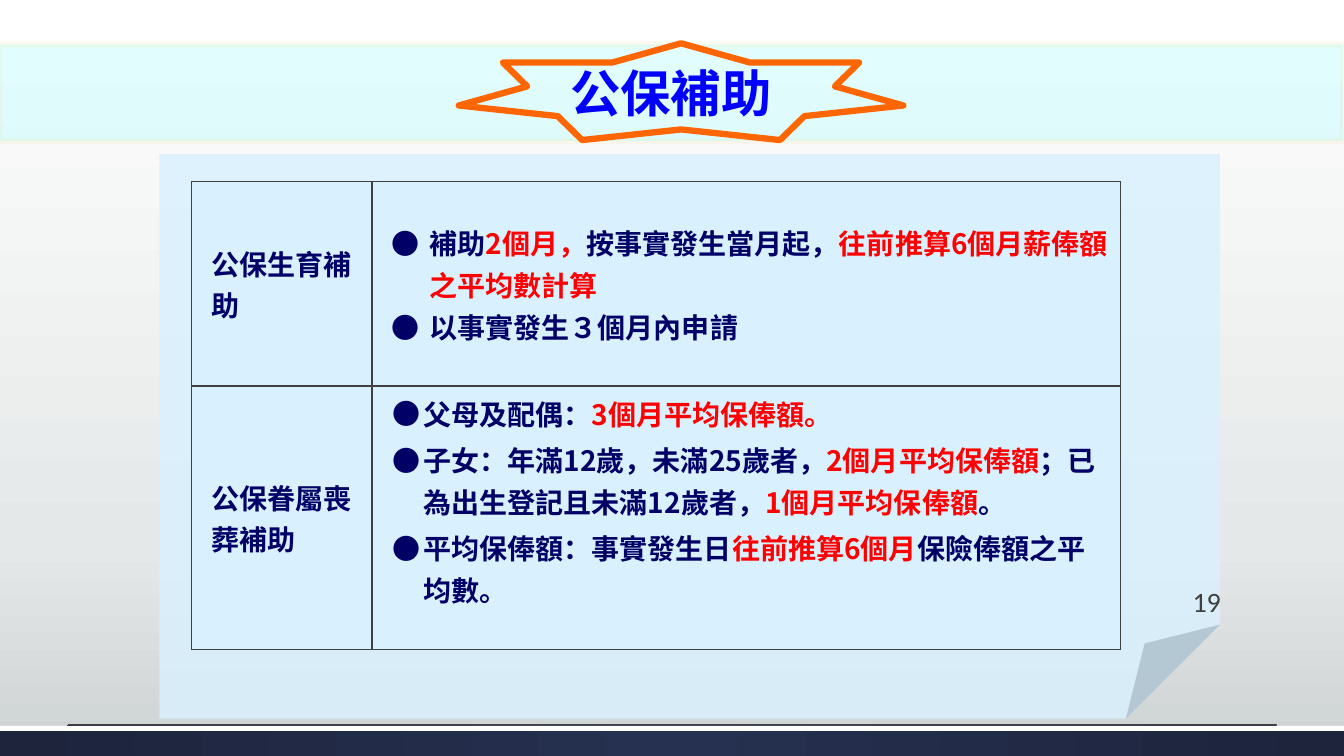
import pptx
import pptx.util
import pptx.dml.color
import pptx.enum.shapes
import pptx.enum.text
import pptx.oxml
import pptx.oxml.ns

Inches, Pt = pptx.util.Inches, pptx.util.Pt
SHAPE = pptx.enum.shapes.MSO_SHAPE
ALIGN = pptx.enum.text.PP_ALIGN
ANCHOR = pptx.enum.text.MSO_ANCHOR
qn = pptx.oxml.ns.qn

HAN = "Noto Sans CJK SC"
NAVY, RED, SKY, GRAY, ORANGE = "000066", "FF0000", "D9F1FF", "404040", "FF6600"
TITLE, PAGE = "公保補助", "19"
COLS, ROWS = (1.79, 7.42), (2.03, 2.61)
FLAT, WIDE, TIGHT = (0.1, 0), (0.47, -0.38), (0.41, -0.31)

CELLS = [
    [
        (FLAT, ANCHOR.MIDDLE, [[("公保生育補", NAVY)], [("助", NAVY)]]),
        (WIDE, ANCHOR.MIDDLE, [
            [("補助", NAVY), ("2個月，", RED), ("按事實發生當月起，", NAVY),
             ("往前推算6個月薪俸額之平均數計算", RED)],
            [("以事實發生３個月內申請", NAVY)],
        ]),
    ],
    [
        (FLAT, ANCHOR.MIDDLE, [[("公保眷屬喪葬補助", NAVY)]]),
        (TIGHT, ANCHOR.TOP, [
            [("父母及配偶：", NAVY), ("3個月平均保俸額。", RED)],
            [("子女：年滿12歲，未滿25歲者，", NAVY), ("2個月平均保俸額", RED),
             ("；已為出生登記且未滿12歲者，", NAVY), ("1個月平均保俸額", RED),
             ("。", NAVY)],
            [("平均保俸額：事實發生日", NAVY), ("往前推算6個月", RED),
             ("保險俸額之平均數。", NAVY)],
        ]),
    ],
]


def put(item, **vals):
    for key, val in vals.items():
        setattr(item, key, val)


def rgb(code):
    return pptx.dml.color.RGBColor.from_string(code)


def node(tag, inner="", attrs=""):
    return pptx.oxml.parse_xml(
        f'<a:{tag} {pptx.oxml.ns.nsdecls("a")} {attrs}>{inner}</a:{tag}>')


def paint(fill, code, alpha=None):
    fill.solid()
    fill.fore_color.rgb = rgb(code)
    if alpha:
        color = fill._xPr.find(qn("a:solidFill"))[0]
        color.append(node("alpha", attrs=f'val="{alpha * 1000}"'))


def blend(fill, stops, way):
    fill.gradient()
    old = fill._xPr.find(qn("a:gradFill"))
    list_xml = "".join(
        f'<a:gs pos="{pos * 1000}"><a:srgbClr val="{code}"/></a:gs>' for pos, code in stops)
    old.getparent().replace(old, node("gradFill", f"<a:gsLst>{list_xml}</a:gsLst>{way}"))


def draw(kind, box):
    shape = slide.shapes.add_shape(kind, *map(Inches, box))
    shape.shadow.inherit = False
    shape.line.fill.background()
    return shape


def write(para, text, size, code, font=HAN, bold=True):
    run = para.add_run()
    run.text = text
    put(run.font, size=Pt(size), bold=bold, name=font)
    run.font.color.rgb = rgb(code)
    run._r.get_or_add_rPr().append(node("ea", attrs=f'typeface="{font}"'))
    return run


def frame(cell):
    props = cell._tc.get_or_add_tcPr()
    line = f'<a:solidFill><a:srgbClr val="{GRAY}"/></a:solidFill>'
    for spot, side in enumerate("LRTB"):
        props.insert(spot, node("ln" + side, line, 'w="12700"'))


def fill_cell(cell, indent, anchor, paras):
    paint(cell.fill, SKY)
    frame(cell)
    cell.vertical_anchor = anchor
    left, hang = indent
    for num, runs in enumerate(paras):
        para = cell.text_frame.add_paragraph() if num else cell.text_frame.paragraphs[0]
        if num == 0 or indent == TIGHT:
            para.space_before = Pt(3.1)
        props = para._p.get_or_add_pPr()
        props.set("marL", str(Inches(left)))
        props.set("indent", str(Inches(hang)))
        if hang:
            para.line_spacing = Pt(30)
            props.append(node("buFont", attrs=f'typeface="{HAN}"'))
            props.append(node("buChar", attrs='char="●"'))
        for text, code in runs:
            write(para, text, 20, code)


deck = pptx.Presentation()
put(deck, slide_width=Inches(13.33), slide_height=Inches(7.5))
slide = deck.slides.add_slide(deck.slide_layouts[5])
blend(slide.background.fill, [(0, "FFFFFF"), (72, "E5E8E8"), (100, "CDD2D2")],
      '<a:lin ang="5400000" scaled="0"/>')

band = slide.shapes.title
put(band, left=Inches(-0.01), top=Inches(0.44), width=Inches(13.33), height=Inches(0.96))
paint(band.fill, "66FFFF", 18)
band.line.width = Pt(4.33)
paint(band.line.fill, "FFC000", 5)
put(band.text_frame, vertical_anchor=ANCHOR.MIDDLE, word_wrap=True,
    auto_size=pptx.enum.text.MSO_AUTO_SIZE.NONE)
head = band.text_frame.paragraphs[0]
head.alignment = ALIGN.CENTER
write(head, TITLE, 36, "0000FF")._r.rPr.set("spc", "-10")

base = draw(SHAPE.RECTANGLE, (0, 7.2, 13.33, 0.3))
blend(base.fill, [(0, "263050"), (100, "1D243C")],
      '<a:path path="circle"><a:fillToRect l="50000" t="50000" r="50000" b="50000"/></a:path>')
strip = draw(SHAPE.RECTANGLE, (0, 7.2, 13.33, 0.05))
paint(strip.fill, "FFFFFF")
rule = slide.shapes.add_connector(
    pptx.enum.shapes.MSO_CONNECTOR.STRAIGHT, *map(Inches, (0.67, 7.19, 12.67, 7.19)))
rule.line.width = Pt(0.75)
paint(rule.line.fill, GRAY)
rule._element.spPr.append(node("effectLst"))

sheet = draw(SHAPE.FOLDED_CORNER, (1.58, 1.53, 10.52, 5.6))
paint(sheet.fill, SKY, 82)

grid = slide.shapes.add_table(
    len(ROWS), len(COLS), *map(Inches, (1.9, 1.8, sum(COLS), sum(ROWS)))).table
put(grid, first_row=False, horz_banding=False)
for col, width in zip(grid.columns, COLS):
    col.width = Inches(width)
for row, height, data in zip(grid.rows, ROWS, CELLS):
    row.height = Inches(height)
    for cell, parts in zip(row.cells, data):
        fill_cell(cell, *parts)

star = draw(SHAPE.STAR_7_POINT, (4.55, 0.43, 4.41, 0.96))
star.fill.background()
star.line.width = Pt(4.5)
paint(star.line.fill, ORANGE)

page = slide.shapes.add_textbox(*map(Inches, (11.73, 5.75, 0.63, 0.44)))
page.text_frame.word_wrap = True
write(page.text_frame.paragraphs[0], PAGE, 20, GRAY, "Calibri", False)

deck.save("out.pptx")
